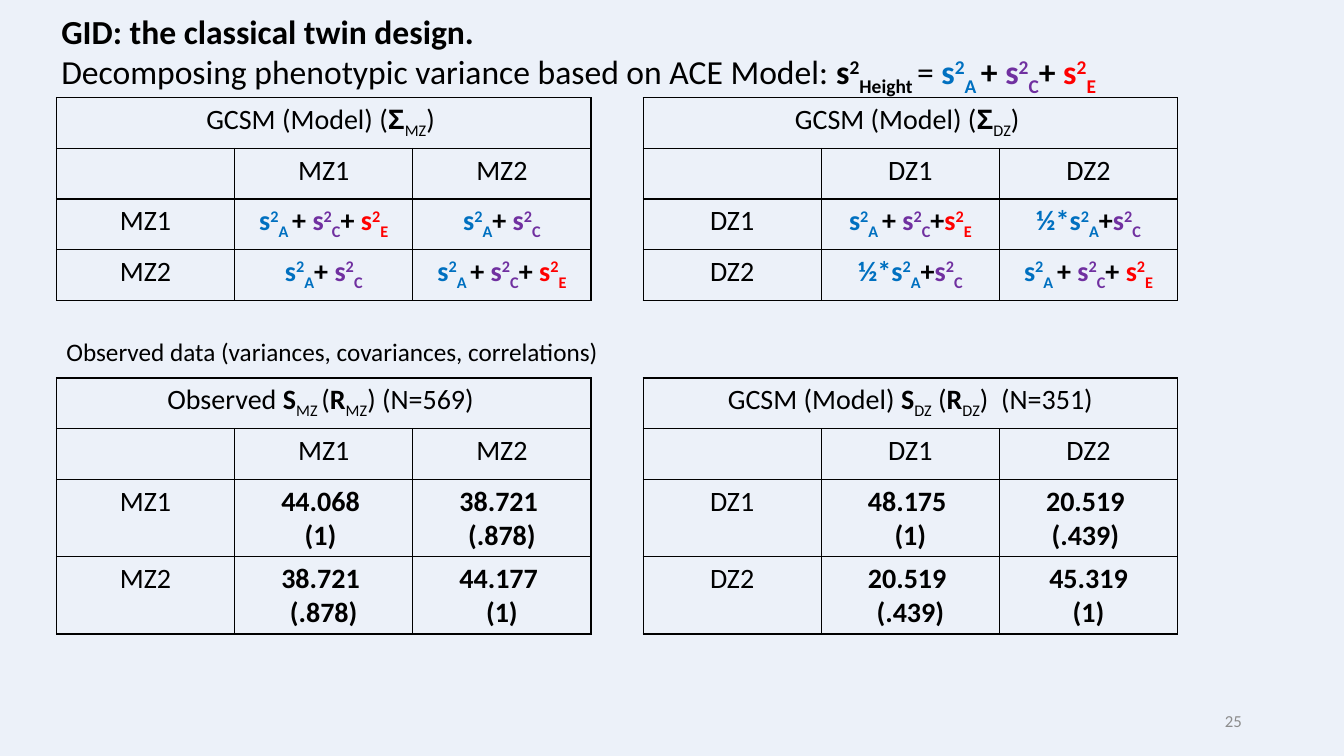
from collections import namedtuple

from lxml import etree
from pptx import Presentation
from pptx import util as u
from pptx.dml.color import RGBColor
from pptx.enum import text as t
from pptx.oxml import ns

COLOURS = {"paper": "ECF1F9", "ink": "000000", "muted": "8C8C8C",
           "A": "0070C0", "C": "7030A0", "E": "FF0000"}
WIDTH, HEIGHT = u.Inches(13.33), u.Inches(7.5)
SUPER, SUB = 30, -25  # baseline shifts in percent

# Grid, in percent of the slide's width and height
PAIR_LEFTS = {"MZ": 4.2, "DZ": 47.85}
MODEL_TOP, OBSERVED_TOP = 12.93, 50
COLUMN, ROW, TALL_ROW = 13.26, 6.7, 10.2

Run = namedtuple("Run", "text bold shift colour font",
                 defaults=(False, 0, "ink", "Calibri"))


def across(share):
    return round(WIDTH * share / 100)


def down(share):
    return round(HEIGHT * share / 100)


def squared(subscript, colour="ink", factor=""):
    """Runs of one variance component."""
    return [Run(factor + "s", True, 0, colour), Run("2", True, SUPER, colour),
            Run(subscript, True, SUB, colour)]


def variance(*parts):
    """Runs of a sum such as "A ", "+ ", "½*A"."""
    runs = []
    for part in parts:
        factor, star, subscript = part.rpartition("*")
        component = subscript.strip()
        if component in COLOURS:
            runs += squared(subscript, component, factor + star)
        else:
            runs.append(Run(part, True))
    return runs


def write(frame, paragraphs, size, align):
    for index, runs in enumerate(paragraphs):
        paragraph = frame.paragraphs[0] if index == 0 else frame.add_paragraph()
        paragraph.alignment = align
        for piece in runs:
            run = paragraph.add_run()
            run.text = piece.text
            run.font.size = u.Pt(size)
            run.font.name = piece.font
            run.font.bold = piece.bold
            run.font.color.rgb = RGBColor.from_string(COLOURS[piece.colour])
            if piece.shift:
                run.font._element.set("baseline", str(piece.shift * 1000))


def add_text(slide, box, paragraphs, size, align=t.PP_ALIGN.LEFT,
             anchor=t.MSO_ANCHOR.TOP, wrap=True):
    left, top, width, height = box
    frame = slide.shapes.add_textbox(across(left), down(top),
                                     across(width), down(height)).text_frame
    frame.word_wrap = wrap
    frame.vertical_anchor = anchor
    write(frame, paragraphs, size, align)


def outline(cell):
    cell.fill.background()
    properties = cell._tc.get_or_add_tcPr()
    for index, side in enumerate(("lnL", "lnR", "lnT", "lnB")):
        line = etree.Element(ns.qn("a:" + side), w=str(u.Pt(1)))
        fill = etree.SubElement(line, ns.qn("a:solidFill"))
        etree.SubElement(fill, ns.qn("a:srgbClr"), val=COLOURS["ink"])
        properties.insert(index, line)


def add_matrix(slide, pair, top, heading, values, value_row):
    """A twin-by-twin table: heading, twin names, then two rows of values."""
    heights = [ROW, ROW, value_row, value_row]
    table = slide.shapes.add_table(
        4, 3, across(PAIR_LEFTS[pair]), down(top),
        across(3 * COLUMN), down(sum(heights))).table
    table.first_row = table.horz_banding = False
    for column in table.columns:
        column.width = across(COLUMN)
    for row, height in zip(table.rows, heights):
        row.height = down(height)

    twins = [[[Run(pair + number)]] for number in "12"]
    grid = [[[heading], [], []], [[], *twins]]
    grid += [[twin, *entries] for twin, entries in zip(twins, values)]
    for row, contents in enumerate(grid):
        for column, paragraphs in enumerate(contents):
            cell = table.cell(row, column)
            outline(cell)
            write(cell.text_frame, paragraphs, 20, t.PP_ALIGN.CENTER)
    table.cell(0, 0).merge(table.cell(0, 2))


def add_model(slide, pair, values):
    heading = [Run("GCSM (Model) ("), Run("Σ", True, font="Arial"),
               Run(pair, shift=SUB), Run(") ")]
    cells = [[[variance(*parts)] for parts in row] for row in values]
    add_matrix(slide, pair, MODEL_TOP, heading, cells, ROW)


def add_observed(slide, pair, heading, values):
    cells = [[[[Run(covariance, True)], [Run(correlation, True)]]
              for covariance, correlation in row] for row in values]
    add_matrix(slide, pair, OBSERVED_TOP, heading, cells, TALL_ROW)


def main():
    deck = Presentation()
    deck.slide_width, deck.slide_height = WIDTH, HEIGHT
    slide = deck.slides.add_slide(deck.slide_layouts[6])
    slide.background.fill.solid()
    slide.background.fill.fore_color.rgb = RGBColor.from_string(COLOURS["paper"])

    # Expected covariance matrices
    total = ("A ", "+ ", "C", "+ ", "E")
    mz_shared = ("A", "+ ", "C")
    dz_shared = ("½*A", "+", "C")
    add_model(slide, "MZ", [[total, mz_shared], [mz_shared, total]])
    add_model(slide, "DZ", [[("A ", "+ ", "C", "+", "E"), dz_shared],
                            [dz_shared, total]])

    # Title
    add_text(slide, (3.82, 0.8, 97.57, 17.47), [
        [Run("GID: the classical twin design.", True)],
        [Run("Decomposing phenotypic variance based on ACE Model: "),
         *squared("Height "), Run("= "), *variance(*total)]], 24)

    # Observed covariances and correlations
    add_observed(slide, "MZ", [
        Run("Observed "), Run("S", True), Run("MZ ", shift=SUB), Run("("),
        Run("R", True), Run("MZ", shift=SUB), Run(") (N=569) ")],
        [[("44.068 ", "(1) "), ("38.721 ", "(.878)")],
         [("38.721 ", "(.878)"), ("44.177 ", "(1)")]])
    add_observed(slide, "DZ", [
        Run("GCSM (Model) "), Run("S", True), Run("DZ", shift=SUB), Run(" ("),
        Run("R", True), Run("DZ", shift=SUB), Run(")  (N=351)")],
        [[("48.175 ", "(1)"), ("20.519 ", "(.439) ")],
         [("20.519 ", "(.439)"), ("45.319", "(1)")]])
    add_text(slide, (4.2, 43.87, 41.5, 5.33),
             [[Run("Observed data (variances, covariances, correlations)")]],
             18, wrap=False)

    # Slide number
    add_text(slide, (70.65, 92.67, 22.5, 5.33), [[Run("25", colour="muted")]],
             12, t.PP_ALIGN.RIGHT, t.MSO_ANCHOR.MIDDLE)
    deck.save("out.pptx")


if __name__ == "__main__":
    main()
